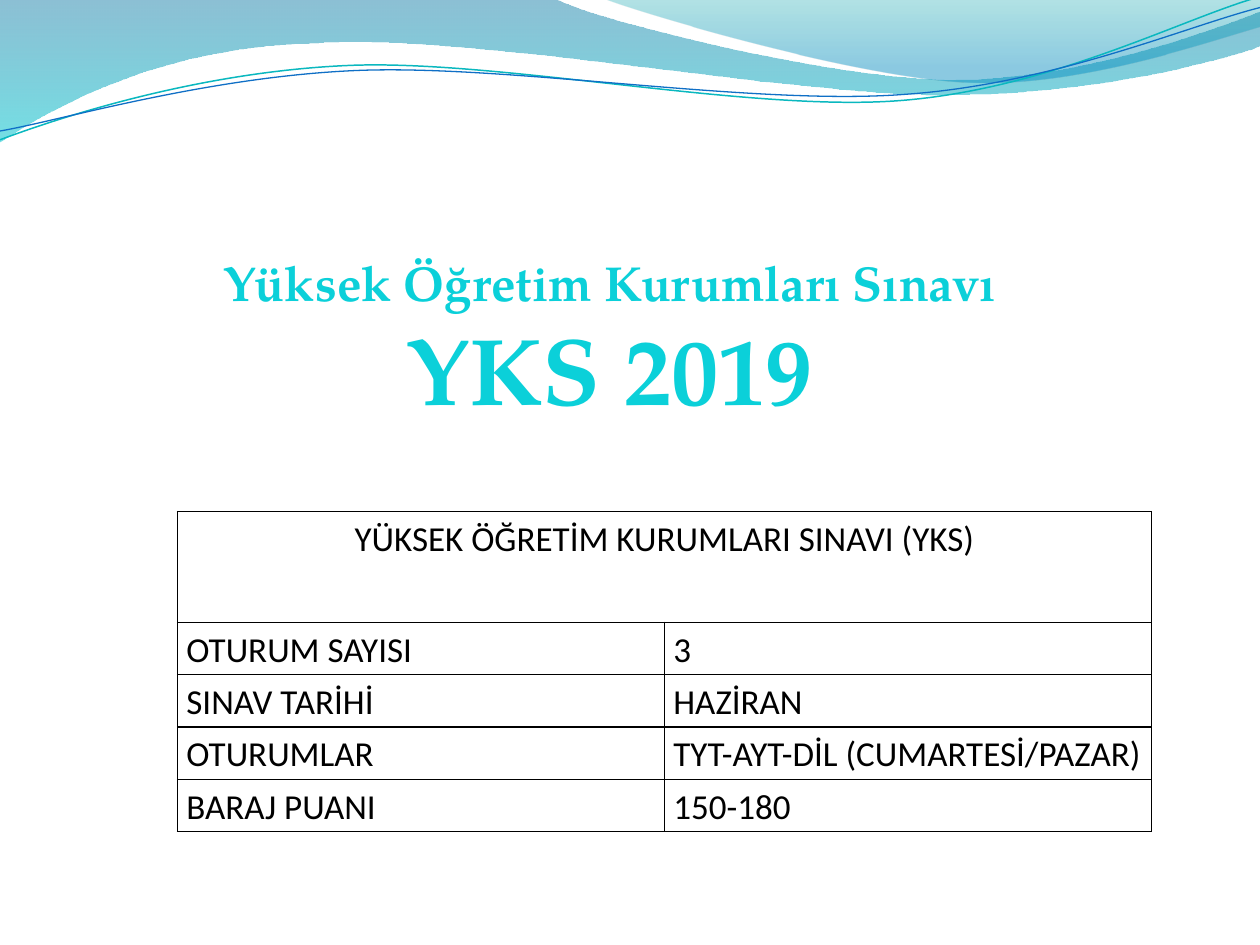
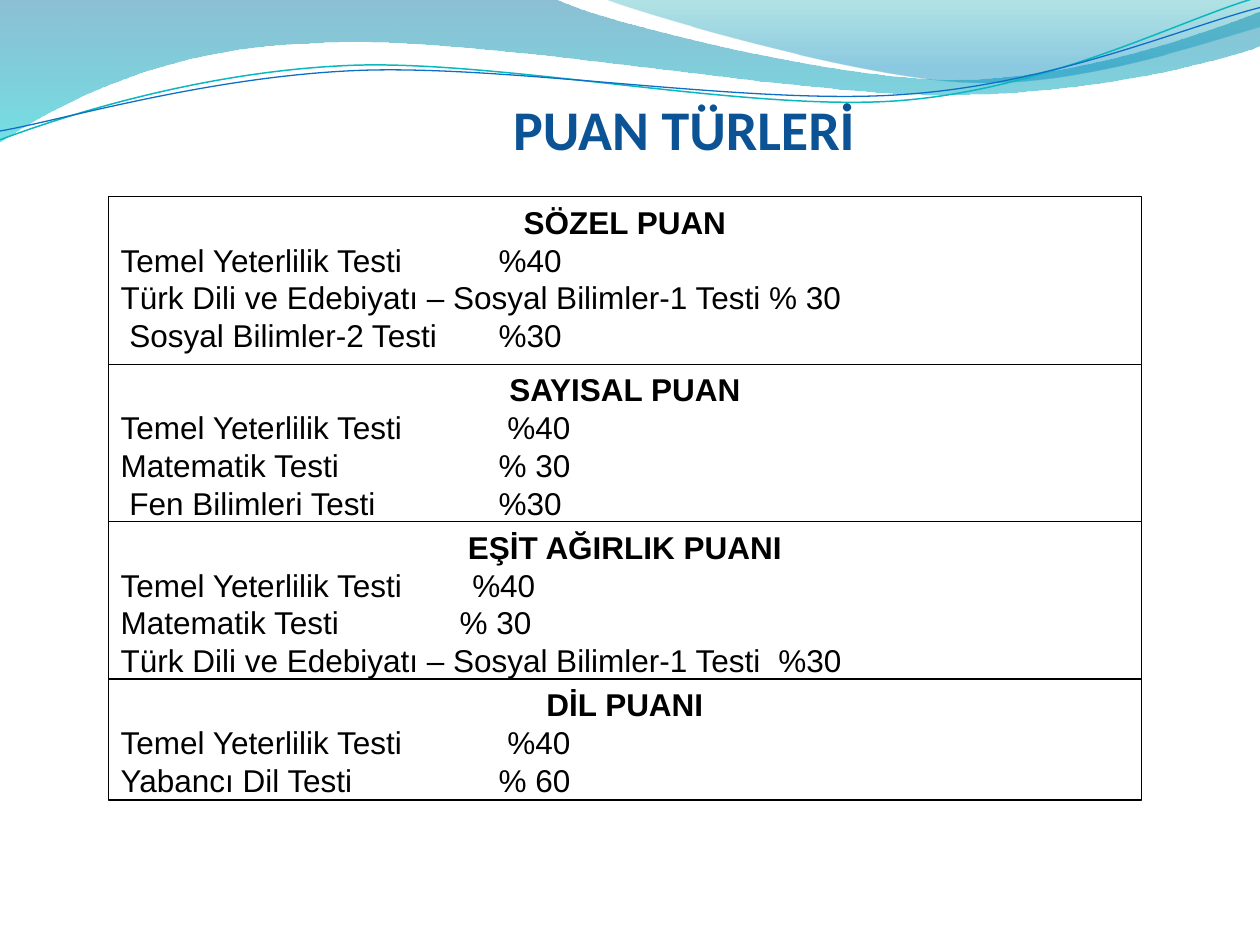
from lxml.etree import SubElement
from pptx import Presentation
from pptx.dml.color import RGBColor
from pptx.enum.shapes import MSO_SHAPE as Shape
from pptx.enum.text import MSO_ANCHOR as Anchor, MSO_AUTO_SIZE as AutoSize, PP_ALIGN as Align
from pptx.oxml import parse_xml
from pptx.oxml.ns import nsdecls, qn
from pptx.util import Inches, Pt

COLORS = {
    "black": "000000", "white": "FFFFFF", "turquoise": "0BD0D9", "navy": "0B5394",
    "deep_blue": "0074A1", "aqua": "00C6CF", "teal": "00A1A9", "sky": "008BBF",
    "teal_line": "0AB8BF", "blue_line": "0F6FC6",
}


def color(name):
    return RGBColor.from_string(COLORS[name])


def add_run(paragraph, text, font_name, size, color_name, bold=False):
    run = paragraph.add_run()
    run.text = text
    run.font.name, run.font.size, run.font.bold = font_name, Pt(size), bold
    run.font.color.rgb = color(color_name)


prs = Presentation()
prs.slide_width, prs.slide_height = Inches(10), Inches(7.5)
exam_slide, scores_slide = (prs.slides.add_slide(prs.slide_layouts[5]) for _ in range(2))

# Titles: box, then one (text, font, size, colour) per line
titles = [
    (exam_slide, (0.31, 1.95, 9.06, 1.48), [
        ("Yüksek Öğretim Kurumları Sınavı", "TeX Gyre Pagella", 28, "turquoise"),
        ("YKS 2019", "TeX Gyre Pagella", 54, "turquoise")]),
    (scores_slide, (2.42, 0.7, 6.02, 1.18), [
        ("PUAN TÜRLERİ", "Calibri", 32, "navy")]),
]
for slide, box, lines in titles:
    title = slide.shapes.title
    title.left, title.top, title.width, title.height = map(Inches, box)
    frame = title.text_frame
    frame.auto_size, frame.vertical_anchor = AutoSize.NONE, Anchor.TOP
    for i, line in enumerate(lines):
        paragraph = frame.add_paragraph() if i else frame.paragraphs[0]
        paragraph.alignment = Align.CENTER
        add_run(paragraph, *line, bold=True)

# Wave header, shared through the slide master.
# Segments: 2 numbers are a straight line, 6 numbers a Bézier curve.
# Bands have (position, colour, opacity) stops; strands have (colour, width).
waves = [
    ((0, 0), [
        (4.4, -0.01), (4.76, 0.17, 6.64, 0.63, 7.58, 0.63),
        (8.53, 0.63, 9.58, 0.26, 10, 0.09), (10.01, 0.36),
        (9.83, 0.44, 8.7, 0.76, 7.46, 0.75), (6.22, 0.75, 3.82, 0.28, 2.57, 0.34),
        (1.29, 0.36, 0.46, 0.83, -0.01, 1.13), (0, 0)],
     [(0, "deep_blue", 45), (1, "aqua", 55)], None),
    ((4.79, -0.01), [
        (5.09, 0.11, 6.82, 0.62, 7.69, 0.65), (8.56, 0.69, 9.61, 0.32, 10, 0.21),
        (10, 0), (4.79, -0.01)],
     [(0, "teal", 30), (0.8, "sky", 45)], None),
    ((0, 1.11), [
        (0.48, 0.93, 1.58, 0.57, 2.77, 0.52), (3.95, 0.47, 5.93, 0.89, 7.13, 0.8),
        (8.33, 0.71, 9.38, 0.15, 9.98, -0.02)],
     None, ("teal_line", 0.85)),
    ((0, 1.04), [
        (0.47, 0.96, 1.64, 0.61, 2.83, 0.56), (4.03, 0.51, 5.97, 0.84, 7.17, 0.75),
        (8.36, 0.67, 9.41, 0.21, 10, 0.06)],
     None, ("blue_line", 0.75)),
]
for start, segments, stops, strand in waves:
    builder = exam_slide.shapes.build_freeform(*map(Inches, start))
    builder.add_line_segments(
        [tuple(map(Inches, segment[-2:])) for segment in segments], close=bool(stops))
    wave = builder.convert_to_shape()
    wave.shadow.inherit = False
    # Bend the straight pieces that have control points
    pieces = list(wave.element.iter(qn("a:lnTo")))
    for piece, segment in zip(pieces, segments):
        if len(segment) == 6:
            piece.tag = qn("a:cubicBezTo")
            for i in (0, 1):
                x, y = segment[2 * i:2 * i + 2]
                control = parse_xml(f'<a:pt {nsdecls("a")} x="{Inches(x) - wave.left}" '
                                    f'y="{Inches(y) - wave.top}"/>')
                piece.insert(i, control)
    if stops:
        wave.line.fill.background()
        wave.fill.gradient()
        wave.fill.gradient_angle = 270
        for stop, (position, name, _) in zip(wave.fill.gradient_stops, stops):
            stop.position, stop.color.rgb = position, color(name)
        tints = list(wave.element.spPr.iter(qn("a:srgbClr")))
        for tint, (_, _, opacity) in zip(tints, stops):
            SubElement(tint, qn("a:alpha"), val=str(opacity * 1000))
    else:
        wave.fill.background()
        wave.line.color.rgb, wave.line.width = color(strand[0]), Pt(strand[1])
    prs.slide_master.shapes.element.append(wave.element)

# Exam table
exam_rows = [
    ("YÜKSEK ÖĞRETİM KURUMLARI SINAVI (YKS)", ""),
    ("OTURUM SAYISI", "3"),
    ("SINAV TARİHİ", "HAZİRAN"),
    ("OTURUMLAR", "TYT-AYT-DİL (CUMARTESİ/PAZAR)"),
    ("BARAJ PUANI", "150-180"),
]
heading_height, exam_height = 0.88, 2.54
row_height = (exam_height - heading_height) / (len(exam_rows) - 1)
exam = exam_slide.shapes.add_table(
    len(exam_rows), 2, Inches(1.41), Inches(4.06), Inches(7.73), Inches(exam_height)).table
exam.first_row = exam.horz_banding = False
for r, values in enumerate(exam_rows):
    exam.rows[r].height = Inches(row_height if r else heading_height)
    for c, value in enumerate(values):
        cell = exam.cell(r, c)
        cell.margin_left = cell.margin_right = Inches(0.07)
        cell.margin_top = cell.margin_bottom = 0
        cell.fill.background()
        for i, side in enumerate(("lnL", "lnR", "lnT", "lnB")):
            cell._tc.get_or_add_tcPr().insert(i, parse_xml(
                f'<a:{side} {nsdecls("a")} w="12700"><a:solidFill>'
                f'<a:srgbClr val="{COLORS["black"]}"/></a:solidFill></a:{side}>'))
        paragraph = cell.text_frame.paragraphs[0]
        paragraph.line_spacing = 1.15
        paragraph.alignment = Align.LEFT if r else Align.CENTER
        if value:
            add_run(paragraph, value, "Calibri", 20, "black")
exam.cell(0, 0).merge(exam.cell(0, 1))

# Score types: top, height, heading, then (line, tab stop)
score_types = [
    (1.56, 1.35, "SÖZEL PUAN", [
        ("Temel Yeterlilik Testi \t%40", 3),
        ("Türk Dili ve Edebiyatı – Sosyal Bilimler-1 Testi % 30", None),
        (" Sosyal Bilimler-2 Testi \t%30", 3)]),
    (2.89, 1.25, "SAYISAL PUAN", [
        ("Temel Yeterlilik Testi \t %40", 3),
        ("Matematik Testi \t% 30", 3),
        (" Fen Bilimleri Testi \t%30", 3)]),
    (4.14, 1.25, "EŞİT AĞIRLIK PUANI", [
        ("Temel Yeterlilik Testi \t%40", 2.79),
        ("Matematik Testi\t% 30", 2.69),
        ("Türk Dili ve Edebiyatı – Sosyal Bilimler-1 Testi\t%30", 5.22)]),
    (5.39, 0.96, "DİL PUANI", [
        ("Temel Yeterlilik Testi \t %40", 3),
        ("Yabancı Dil Testi \t% 60", 3)]),
]
for top, height, heading, weights in score_types:
    score = scores_slide.shapes.add_shape(
        Shape.RECTANGLE, Inches(0.86), Inches(top), Inches(8.2), Inches(height))
    score.shadow.inherit = False
    score.fill.solid()
    score.fill.fore_color.rgb = color("white")
    score.line.color.rgb, score.line.width = color("black"), Pt(0.75)
    frame = score.text_frame
    frame.word_wrap, frame.vertical_anchor = True, Anchor.TOP
    for i, (text, tab) in enumerate([(heading, None)] + weights):
        paragraph = frame.add_paragraph() if i else frame.paragraphs[0]
        paragraph.alignment = Align.LEFT if i else Align.CENTER
        paragraph.line_spacing = Pt(21.6)
        if tab:
            tabs = SubElement(paragraph._p.get_or_add_pPr(), qn("a:tabLst"))
            SubElement(tabs, qn("a:tab"), pos=str(Inches(tab)), algn="l")
        add_run(paragraph, text, "Arial", 18, "black", bold=not i)

prs.save("out.pptx")
